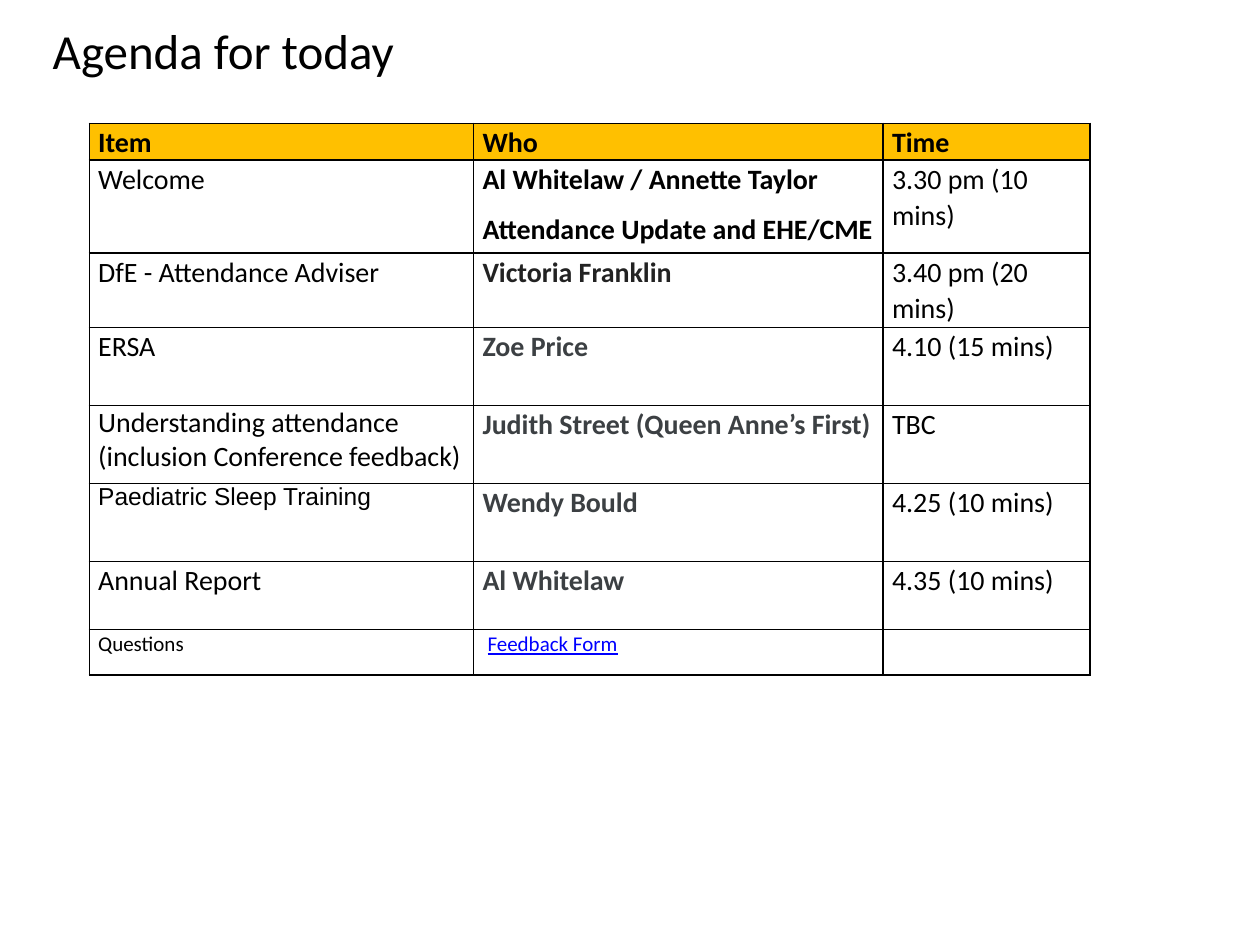
from lxml import etree
from pptx import Presentation
from pptx.dml.color import RGBColor
from pptx.enum.text import MSO_ANCHOR
from pptx.oxml.ns import qn
from pptx.util import Inches, Pt

MIDDLE = MSO_ANCHOR.MIDDLE
BLACK, CHARCOAL, GREY = "000000", "222222", "3C4043"
AMBER, LINK_BLUE = "FFC000", "0000FF"


def color(value):
    return RGBColor.from_string(value)


def add_borders(cell):
    """Draw a 1 pt black line on every side, ahead of the cell fill."""
    properties = cell._tc.get_or_add_tcPr()
    for index, side in enumerate(("lnL", "lnR", "lnT", "lnB")):
        line = etree.Element(qn(f"a:{side}"), w=str(Pt(1)))
        fill = etree.SubElement(line, qn("a:solidFill"))
        etree.SubElement(fill, qn("a:srgbClr"), val=BLACK)
        properties.insert(index, line)


presentation = Presentation()
presentation.slide_width = Inches(10)
presentation.slide_height = Inches(7.5)
slide = presentation.slides.add_slide(presentation.slide_layouts[6])

# Title
title = slide.shapes.add_textbox(Inches(0.32), Inches(-0.19), Inches(6.91), Inches(1.17))
title.text_frame.word_wrap = True
title.text_frame.vertical_anchor = MIDDLE
title.text_frame.text = "Agenda for today"
title_font = title.text_frame.paragraphs[0].runs[0].font
title_font.name = "Calibri"
title_font.size = Pt(28)
title_font.color.rgb = color(BLACK)

# Agenda: item, who, time, colour of the "who" column
agenda = [
    ("Item", "Who", "Time", BLACK),
    ("Welcome", "Al Whitelaw / Annette Taylor\nAttendance Update and EHE/CME",
     "3.30 pm (10 mins)", BLACK),
    ("DfE - Attendance Adviser", "Victoria Franklin", "3.40 pm (20 mins)", CHARCOAL),
    ("ERSA", "Zoe Price", "4.10 (15 mins)", GREY),
    ("Understanding attendance (inclusion Conference feedback)",
     "Judith Street (Queen Anne’s First)", "TBC", GREY),
    ("Paediatric Sleep Training", "Wendy Bould", "4.25 (10 mins)", GREY),
    ("Annual Report", "Al Whitelaw", "4.35 (10 mins)", GREY),
    ("Questions", "Feedback Form", "", LINK_BLUE),
]
column_widths = [3.05, 3.25, 1.64]
row_heights = [0.29, 0.74, 0.59, 0.62, 0.62, 0.62, 0.54, 0.36]
last_row = len(agenda) - 1
single_spaced = ("Understanding attendance (inclusion Conference feedback)",
                 "Paediatric Sleep Training")

table = slide.shapes.add_table(
    len(agenda), len(column_widths), Inches(0.71), Inches(0.98),
    Inches(sum(column_widths)), Inches(sum(row_heights))).table
table.horz_banding = False
for column, width in zip(table.columns, column_widths):
    column.width = Inches(width)
for row, height in zip(table.rows, row_heights):
    row.height = Inches(height)

for row_index, (*texts, who_color) in enumerate(agenda):
    for column_index, text in enumerate(texts):
        cell = table.cell(row_index, column_index)
        cell.margin_left = cell.margin_right = Inches(0.07)
        cell.margin_top = cell.margin_bottom = 0
        if row_index == 0:
            cell.fill.solid()
            cell.fill.fore_color.rgb = color(AMBER)
        else:
            cell.fill.background()
        add_borders(cell)

        cell.text_frame.text = text
        is_who = column_index == 1
        for paragraph in cell.text_frame.paragraphs:
            if text not in single_spaced:
                paragraph.line_spacing = 1.07
                paragraph.space_after = Pt(8)
            font = paragraph.font
            if paragraph.runs:
                font = paragraph.runs[0].font
            font.name = "Calibri"
            font.size = Pt(12 if row_index == last_row else 16)
            font.bold = row_index == 0 or (is_who and row_index < last_row)
            font.color.rgb = color(who_color if is_who else BLACK)

# Exceptions: the sleep training item and the underlined form name
sleep_font = table.cell(5, 0).text_frame.paragraphs[0].runs[0].font
sleep_font.name = "Arial"
sleep_font.size = Pt(14)
form_cell = table.cell(last_row, 1)
form_cell.margin_left = Inches(0.11)
form_cell.text_frame.paragraphs[0].runs[0].font.underline = True

presentation.save("out.pptx")
